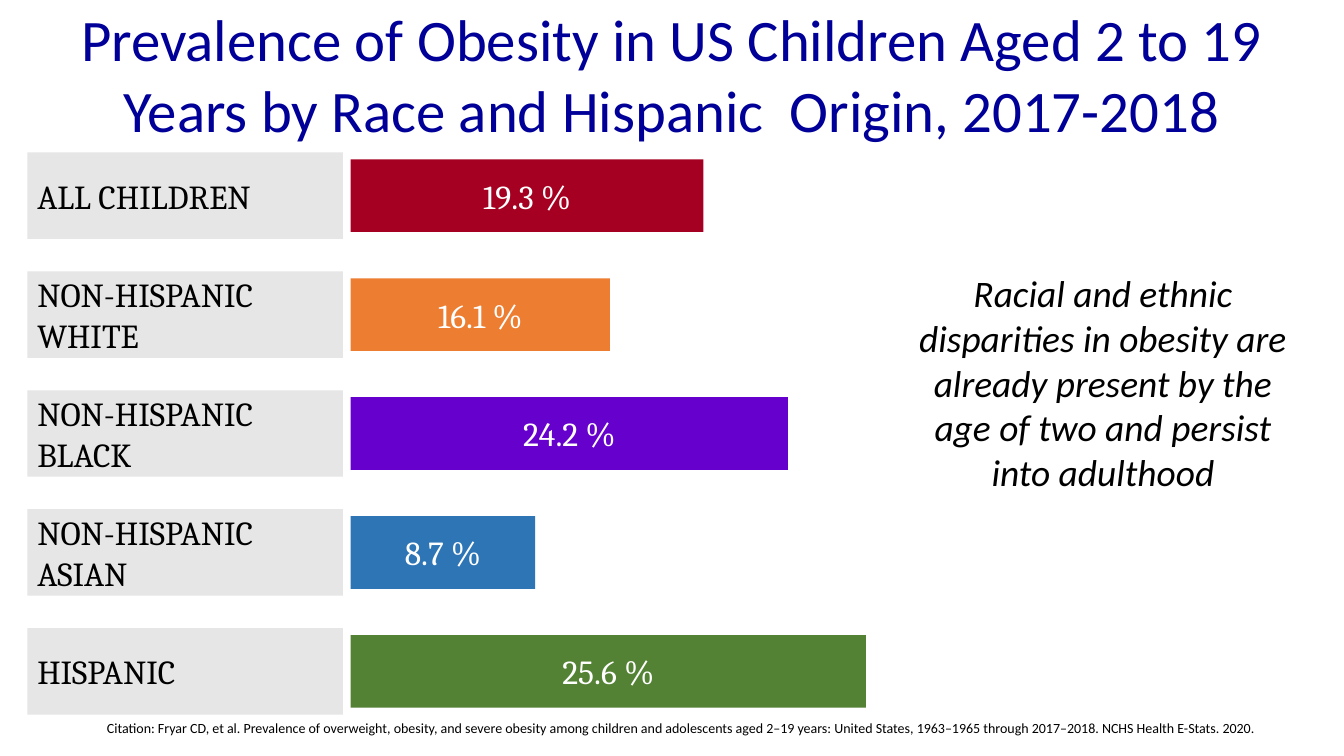
from pptx import Presentation
from pptx.dml.color import RGBColor
from pptx.enum.shapes import MSO_SHAPE as Shape
from pptx.enum.text import MSO_ANCHOR as Anchor, PP_ALIGN as Align
from pptx.util import Cm, Pt

COLORS = {
    "title": "000099", "black": "000000", "white": "FFFFFF", "label": "E7E6E6",
    "red": "A50021", "orange": "ED7D31", "purple": "6600CC",
    "blue": "2E75B6", "green": "548235",
}

# Group, rate, bar length in cm, bar colour
ROWS = [
    ("ALL CHILDREN", "19.3 %", 8.89, "red"),
    ("NON-HISPANIC WHITE", "16.1 %", 6.53, "orange"),
    ("NON-HISPANIC BLACK", "24.2 %", 11.02, "purple"),
    ("NON-HISPANIC ASIAN", "8.7 %", 4.65, "blue"),
    ("HISPANIC", "25.6 %", 12.98, "green"),
]


def color(name):
    return RGBColor.from_string(COLORS[name])


def write(shape, text, ink, align=Align.CENTER, anchor=Anchor.TOP, **style):
    frame = shape.text_frame
    frame.word_wrap = True
    frame.vertical_anchor = anchor
    par = frame.paragraphs[0]
    par.alignment = align
    run = par.add_run()
    run.text = text
    for key, value in style.items():
        setattr(run.font, key, value)
    run.font.color.rgb = color(ink)


def add_title(slide, box, text):
    title = slide.shapes.title
    for key, value in zip(("left", "top", "width", "height"), box):
        setattr(title, key, Cm(value))
    write(title, text, "title", name="Calibri", size=Pt(42))


def add_note(slide, box, text, **style):
    note = slide.shapes.add_textbox(*map(Cm, box))
    write(note, text, "black", name="Calibri", **style)


def add_block(slide, box, fill, text, ink, align):
    block = slide.shapes.add_shape(Shape.RECTANGLE, *map(Cm, box))
    block.shadow.inherit = False
    block.fill.solid()
    block.fill.fore_color.rgb = color(fill)
    block.line.fill.background()
    write(block, text, ink, align, Anchor.MIDDLE, name="Cambria", size=Pt(24))


def add_bars(slide, box, rows):
    left, top, width, height = box
    tall, thick, wide, gap = 2.18, 1.83, 7.95, 0.2
    step = (height - tall) / (len(rows) - 1)
    start = left + wide + gap
    for i, (group, rate, length, fill) in enumerate(rows):
        y = top + i * step
        # Group label
        add_block(slide, (left, y, wide, tall), "label", group, "black", Align.LEFT)
        # Rate bar, centred on its label
        bar = (start, y + (tall - thick) / 2, length, thick)
        add_block(slide, bar, fill, rate, "white", Align.CENTER)


def main():
    deck = Presentation()
    deck.slide_width, deck.slide_height = Cm(33.87), Cm(19.05)
    slide = deck.slides.add_slide(deck.slide_layouts[5])

    add_title(slide, (0.3, -0.05, 33.25, 3.84),
              "Prevalence of Obesity in US Children Aged 2 to 19 Years "
              "by Race and Hispanic  Origin, 2017-2018")
    add_bars(slide, (0.69, 3.84, 21.13, 14.17), ROWS)

    # Takeaway
    add_note(slide, (22.58, 6.68, 10.44, 5.97),
             "Racial and ethnic disparities in obesity are already present "
             "by the age of two and persist into adulthood",
             size=Pt(26.7), italic=True)
    # Source
    add_note(slide, (0.74, 18.01, 32.82, 0.69),
             "Citation: Fryar CD, et al. Prevalence of overweight, obesity, and "
             "severe obesity among children and adolescents aged 2–19 years: "
             "United States, 1963–1965 through 2017–2018. "
             "NCHS Health E-Stats. 2020.",
             size=Pt(10))
    deck.save("out.pptx")


if __name__ == "__main__":
    main()
